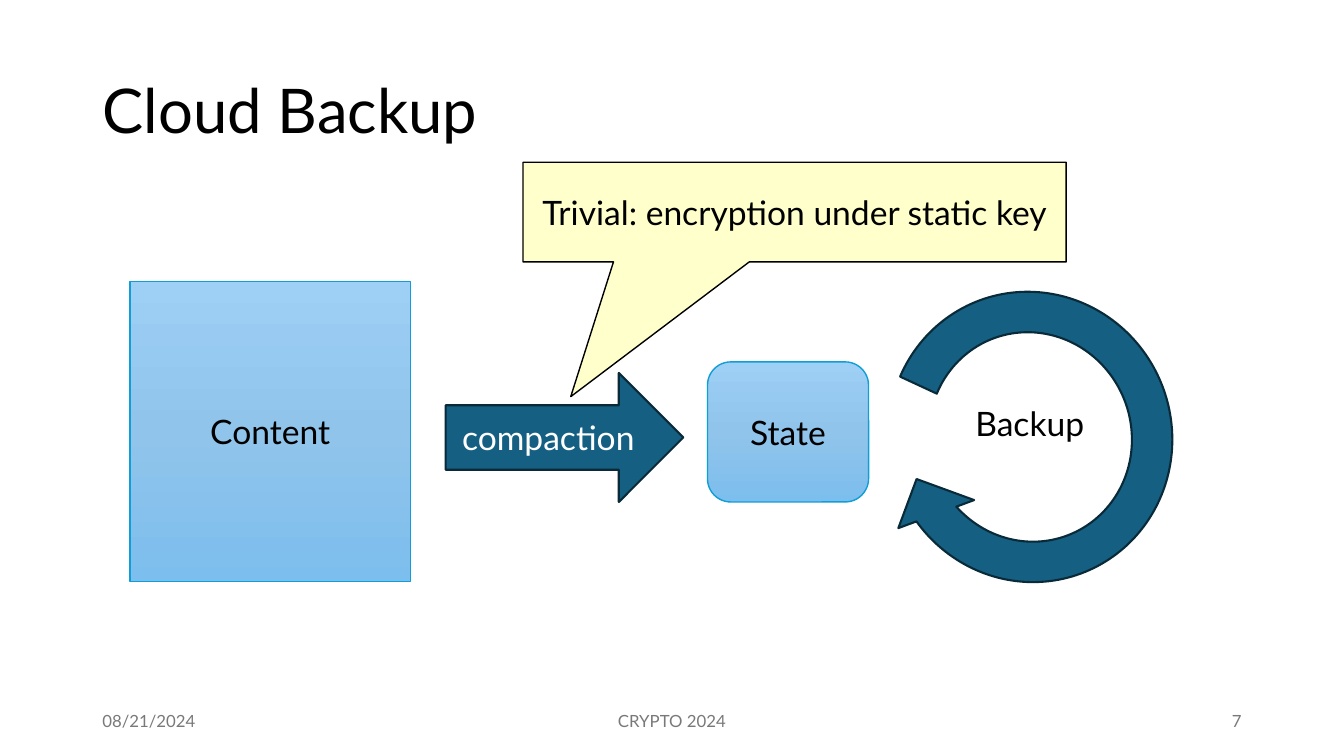
"""Build the Cloud Backup slide: content is compacted to a state that is backed up."""
from copy import deepcopy

from lxml.etree import SubElement
from pptx import Presentation
from pptx.dml.color import RGBColor
from pptx.enum.shapes import MSO_SHAPE
from pptx.enum.text import MSO_ANCHOR, MSO_AUTO_SIZE, PP_ALIGN
from pptx.oxml.ns import qn
from pptx.util import Cm, Pt

FONT = "Lato"
BLACK = RGBColor(0x00, 0x00, 0x00)
WHITE = RGBColor(0xFF, 0xFF, 0xFF)
GREY = RGBColor(0x79, 0x79, 0x79)
TEAL = RGBColor(0x15, 0x60, 0x82)
DARK_TEAL = RGBColor(0x09, 0x2A, 0x39)
SKY_LINE = RGBColor(0x0F, 0x9E, 0xD5)
YELLOW = RGBColor(0xFF, 0xFF, 0x99)
SKY_STOPS = [
    (0, RGBColor(0x9E, 0xCF, 0xF5)),
    (0.5, RGBColor(0x90, 0xC4, 0xEB)),
    (1, RGBColor(0x7C, 0xBE, 0xED)),
]

TITLE = ("Cloud Backup", (2.33, 1.02, 29.21, 3.68))
FOOTER_TOP, FOOTER_HEIGHT = 17.65, 1.02
FOOTERS = [
    ("08/21/2024", 2.33, 7.62, PP_ALIGN.LEFT),
    ("CRYPTO 2024", 11.22, 11.43, PP_ALIGN.CENTER),
    ("7", 23.92, 7.62, PP_ALIGN.RIGHT),
]
STORES = [
    ("Content", MSO_SHAPE.FLOWCHART_PROCESS, (3.28, 7.09, 7.06, 7.57)),
    ("State", MSO_SHAPE.ROUNDED_RECTANGLE, (17.83, 9.12, 4.06, 3.53)),
]
COMPACTION = ("compaction", (11.23, 9.4, 5.99, 3.25))
LOOP_PLACE = (21.89, 6.83, 8.15, 8.36)
LOOP_ROTATION = 159.7
LOOP_ADJUSTMENTS = [0.125, 11.423, 204.577, 27.084, 0.125]
BACKUP = ("Backup", (24.33, 10.03, 3.5, 1.27))
CALLOUT = ("Trivial: encryption under static key", (13.18, 4.09, 13.69, 2.51))
CALLOUT_TIP = [-0.412, 1.853]


def write(shape, text, size=24, color=BLACK, align=PP_ALIGN.CENTER, anchor=MSO_ANCHOR.MIDDLE):
    """Put one formatted line of text into a shape."""
    frame = shape.text_frame
    frame.word_wrap = True
    frame.auto_size = MSO_AUTO_SIZE.NONE
    frame.vertical_anchor = anchor
    para = frame.paragraphs[0]
    para.alignment = align
    span = para.add_run()
    span.text = text
    span.font.name = FONT
    span.font.size = Pt(size)
    span.font.color.rgb = color
    return para


def add_figure(page, kind, place, line_color, line_width=1, fill_color=None, adjustments=()):
    """Add an outlined preset shape without shadow."""
    shape = page.shapes.add_shape(kind, *map(Cm, place))
    shape.shadow.inherit = False
    shape.line.color.rgb = line_color
    shape.line.width = Pt(line_width)
    if fill_color is not None:
        shape.fill.solid()
        shape.fill.fore_color.rgb = fill_color
    for index, value in enumerate(adjustments):
        shape.adjustments[index] = value
    return shape


def fill_sky(shape):
    """Fill a shape with the downward blue gradient."""
    shape.fill.gradient()
    shape.fill.gradient_angle = 270
    stop_list = shape._element.spPr.find(".//" + qn("a:gsLst"))
    stop_list.append(deepcopy(stop_list[-1]))
    for stop, (position, color) in zip(shape.fill.gradient_stops, SKY_STOPS):
        stop.position = position
        stop.color.rgb = color


def add_label(page, place, text, **style):
    """Add a text box holding one line."""
    write(page.shapes.add_textbox(*map(Cm, place)), text, **style)


def main():
    """Assemble and save the deck."""
    deck = Presentation()
    deck.slide_width, deck.slide_height = Cm(33.87), Cm(19.05)
    page = deck.slides.add_slide(deck.slide_layouts[5])

    text, place = TITLE
    title = page.shapes.title
    title.left, title.top, title.width, title.height = map(Cm, place)
    write(title, text, size=44, align=PP_ALIGN.LEFT).line_spacing = 0.9

    for text, left, width, align in FOOTERS:
        add_label(page, (left, FOOTER_TOP, width, FOOTER_HEIGHT), text,
                  size=12, color=GREY, align=align)

    for text, kind, place in STORES:
        store = add_figure(page, kind, place, SKY_LINE)
        fill_sky(store)
        write(store, text)

    text, place = COMPACTION
    arrow = add_figure(page, MSO_SHAPE.RIGHT_ARROW, place, DARK_TEAL, 1.5, TEAL)
    write(arrow, text, color=WHITE)

    loop = add_figure(page, MSO_SHAPE.CIRCULAR_ARROW, LOOP_PLACE, DARK_TEAL, 1.5, TEAL,
                      LOOP_ADJUSTMENTS)
    loop.rotation = LOOP_ROTATION
    text, place = BACKUP
    add_label(page, place, text, align=PP_ALIGN.LEFT, anchor=MSO_ANCHOR.TOP)

    text, place = CALLOUT
    callout = add_figure(page, MSO_SHAPE.RECTANGULAR_CALLOUT, place, BLACK, 1, YELLOW, CALLOUT_TIP)
    fill_color = callout._element.spPr.find(qn("a:solidFill"))[0]
    SubElement(fill_color, qn("a:alpha"), val="50000")
    write(callout, text)

    deck.save("out.pptx")


if __name__ == "__main__":
    main()
